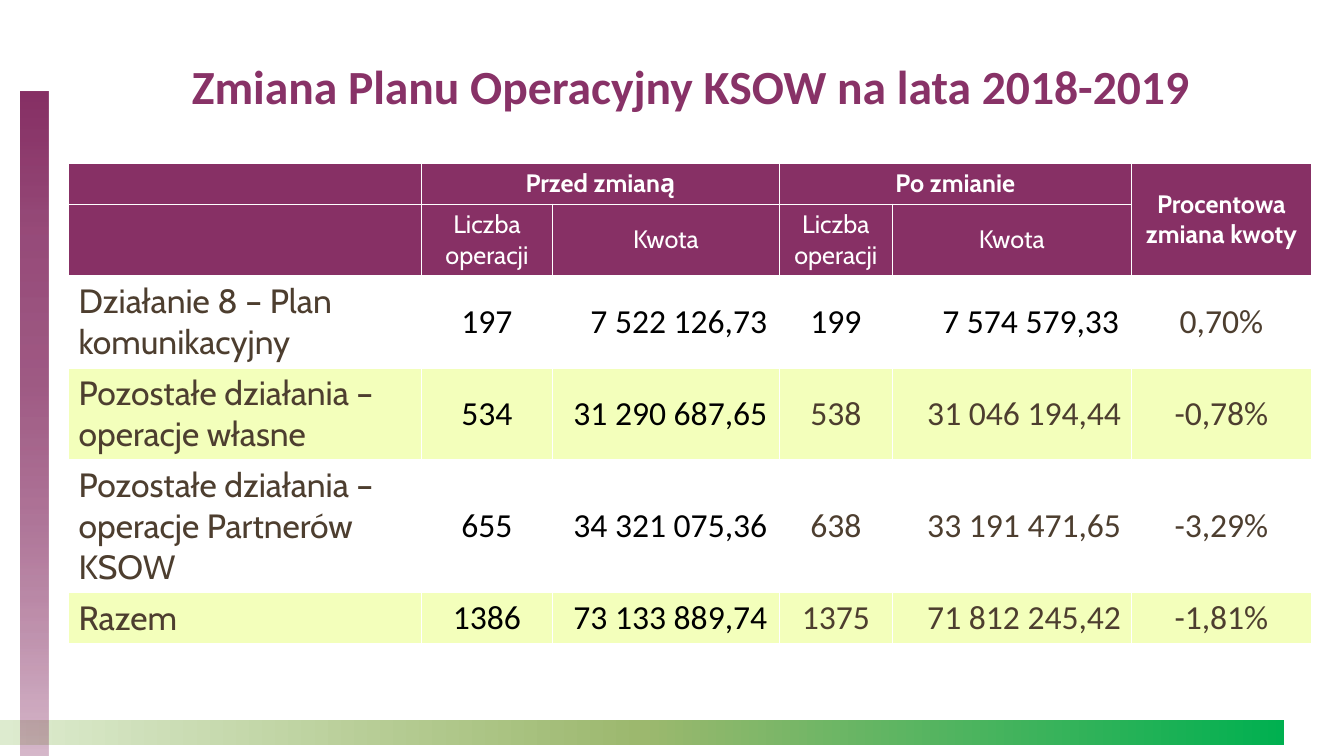
"""Build the slide comparing the operational plan before and after its change."""
import dataclasses

import lxml.etree
import pptx
import pptx.dml.color
import pptx.enum.shapes
import pptx.enum.text
import pptx.oxml.ns
import pptx.util

ALIGN = pptx.enum.text.PP_ALIGN
MIDDLE = pptx.enum.text.MSO_ANCHOR.MIDDLE


@dataclasses.dataclass(frozen=True)
class Theme:
    """Colours, fonts and type sizes of the slide."""
    plum: str = "873065"
    title: str = "883267"
    brown: str = "4D3E2F"
    black: str = "000000"
    white: str = "FFFFFF"
    lime: str = "F3FFBB"
    text_font: str = "Cabin"
    number_font: str = "Calibri"
    title_size: int = 34
    header_size: int = 18
    body_size: int = 24
    green_fade: tuple = ((0, "DDEBCF", 100), (50, "9CB86E", 100), (100, "00B050", 100))
    plum_fade: tuple = tuple((stop, "873065", alpha) for stop, alpha in (
        (0, 100), (20, 87), (44, 79), (65, 66), (85, 49), (100, 34)))


THEME = Theme()
SLIDE_WIDTH = pptx.util.Inches(13.33)
SLIDE_HEIGHT = pptx.util.Inches(7.5)
GRID_COLUMNS, GRID_ROWS = 133.3, 75

COLUMN_SPANS = (35, 13, 22.5, 11.2, 23.7, 17.9)
ROW_SPANS = (4, 7.1, 9.15, 9.1, 13.2, 5)
HEADERS = (
    ("", "Przed zmianą", "", "Po zmianie", "", "Procentowa zmiana kwoty"),
    ("", "Liczba operacji", "Kwota", "Liczba operacji", "Kwota", ""),
)
HEADER_MERGES = (((0, 1), (0, 2)), ((0, 3), (0, 4)), ((0, 5), (1, 5)))
OPERATIONS = (
    ("Działanie 8 – Plan komunikacyjny",
     "197", "7 522 126,73", "199", "7 574 579,33", "0,70%"),
    ("Pozostałe działania – operacje własne",
     "534", "31 290 687,65", "538", "31 046 194,44", "-0,78%"),
    ("Pozostałe działania – operacje Partnerów KSOW",
     "655", "34 321 075,36", "638", "33 191 471,65", "-3,29%"),
    ("Razem", "1386", "73 133 889,74", "1375", "71 812 245,42", "-1,81%"),
)
BODY_ALIGNMENTS = (ALIGN.LEFT, ALIGN.CENTER, ALIGN.RIGHT, ALIGN.CENTER, ALIGN.RIGHT, ALIGN.CENTER)


def across(columns):
    """Convert grid columns to a length."""
    return round(SLIDE_WIDTH * columns / GRID_COLUMNS)


def down(rows):
    """Convert grid rows to a length."""
    return round(SLIDE_HEIGHT * rows / GRID_ROWS)


def area(left, top, width, height):
    """Convert a grid area to left, top, width and height."""
    return across(left), down(top), across(width), down(height)


def rgb(colour):
    """Return a colour object for a hex value."""
    return pptx.dml.color.RGBColor.from_string(colour)


def add_element(parent, tag, **attributes):
    """Append a DrawingML element to its parent."""
    element = lxml.etree.SubElement(parent, pptx.oxml.ns.qn(tag))
    for name, value in attributes.items():
        element.set(name, str(value))
    return element


def format_text(frame, alignment, font, size, colour, bold=False):
    """Format every run of a text frame."""
    for paragraph in frame.paragraphs:
        paragraph.alignment = alignment
        for run in paragraph.runs:
            run.font.name = font
            run.font.size = pptx.util.Pt(size)
            run.font.bold = bold
            run.font.color.rgb = rgb(colour)


def add_fading_bar(slide, place, fade, angle):
    """Add a decorative bar with a linear gradient."""
    bar = slide.shapes.add_shape(pptx.enum.shapes.MSO_SHAPE.RECTANGLE, *place)
    bar.shadow.inherit = False
    bar.line.fill.background()
    bar.fill.gradient()
    bar.fill.gradient_angle = angle
    stops = bar.element.spPr.find(".//" + pptx.oxml.ns.qn("a:gsLst"))
    for default_stop in list(stops):
        stops.remove(default_stop)
    for position, colour, alpha in fade:
        stop = add_element(stops, "a:gs", pos=position * 1000)
        tone = add_element(stop, "a:srgbClr", val=colour)
        if alpha < 100:
            add_element(tone, "a:alpha", val=alpha * 1000)


def set_title(slide, text):
    """Place and format the slide title."""
    title = slide.shapes.title
    title.left, title.top, title.width, title.height = area(6.8, 3, 123.4, 8.8)
    frame = title.text_frame
    frame.text = text
    frame.word_wrap = True
    frame.auto_size = pptx.enum.text.MSO_AUTO_SIZE.NONE
    frame.vertical_anchor = pptx.enum.text.MSO_ANCHOR.BOTTOM
    format_text(frame, ALIGN.CENTER, THEME.number_font, THEME.title_size, THEME.title, True)


def style_cell(cell, fill):
    """Give a cell its borders, fill and vertical centring."""
    properties = cell._tc.get_or_add_tcPr()
    for side in ("a:lnL", "a:lnR", "a:lnT", "a:lnB"):
        border = add_element(properties, side, w=pptx.util.Pt(1))
        add_element(add_element(border, "a:solidFill"), "a:srgbClr", val=THEME.white)
    cell.fill.solid()
    cell.fill.fore_color.rgb = rgb(fill)
    cell.vertical_anchor = MIDDLE


def fill_headers(table):
    """Write the two header rows and merge their groups."""
    for row, labels in enumerate(HEADERS):
        for column, label in enumerate(labels):
            cell = table.cell(row, column)
            cell.text_frame.text = label
            style_cell(cell, THEME.plum)
            format_text(cell.text_frame, ALIGN.CENTER, THEME.text_font,
                        THEME.header_size, THEME.white, row == 0)
    for first, last in HEADER_MERGES:
        table.cell(*first).merge(table.cell(*last))


def fill_operations(table):
    """Write the operation rows with alternating fills."""
    for index, values in enumerate(OPERATIONS):
        for column, value in enumerate(values):
            cell = table.cell(index + len(HEADERS), column)
            cell.text_frame.text = value
            style_cell(cell, THEME.lime if index % 2 else THEME.white)
            plain = column in (1, 2) or (index == 0 and column in (3, 4))
            if plain:
                cell.margin_left = cell.margin_top = cell.margin_bottom = 0
                cell.margin_right = across(1.2) if column in (2, 4) else 0
            format_text(cell.text_frame, BODY_ALIGNMENTS[column],
                        THEME.number_font if column else THEME.text_font,
                        THEME.body_size, THEME.black if plain else THEME.brown)


def add_plan_table(slide):
    """Add the table of operations and amounts."""
    place = area(6.8, 16.2, sum(COLUMN_SPANS), sum(ROW_SPANS))
    table = slide.shapes.add_table(len(ROW_SPANS), len(COLUMN_SPANS), *place).table
    table.first_row = table.horz_banding = False
    for column, span in zip(table.columns, COLUMN_SPANS):
        column.width = across(span)
    for row, span in zip(table.rows, ROW_SPANS):
        row.height = down(span)
    fill_headers(table)
    fill_operations(table)


def main():
    """Build and save the presentation."""
    presentation = pptx.Presentation()
    presentation.slide_width = SLIDE_WIDTH
    presentation.slide_height = SLIDE_HEIGHT
    slide = presentation.slides.add_slide(presentation.slide_layouts.get_by_name("Title Only"))
    add_fading_bar(slide, area(0, 71.4, 127.4, 2.5), THEME.green_fade, 0)
    add_fading_bar(slide, area(2, 9.1, 2.8, 65.9), THEME.plum_fade, 270)
    set_title(slide, "Zmiana Planu Operacyjny KSOW na lata 2018-2019")
    add_plan_table(slide)
    presentation.save("out.pptx")


if __name__ == "__main__":
    main()
